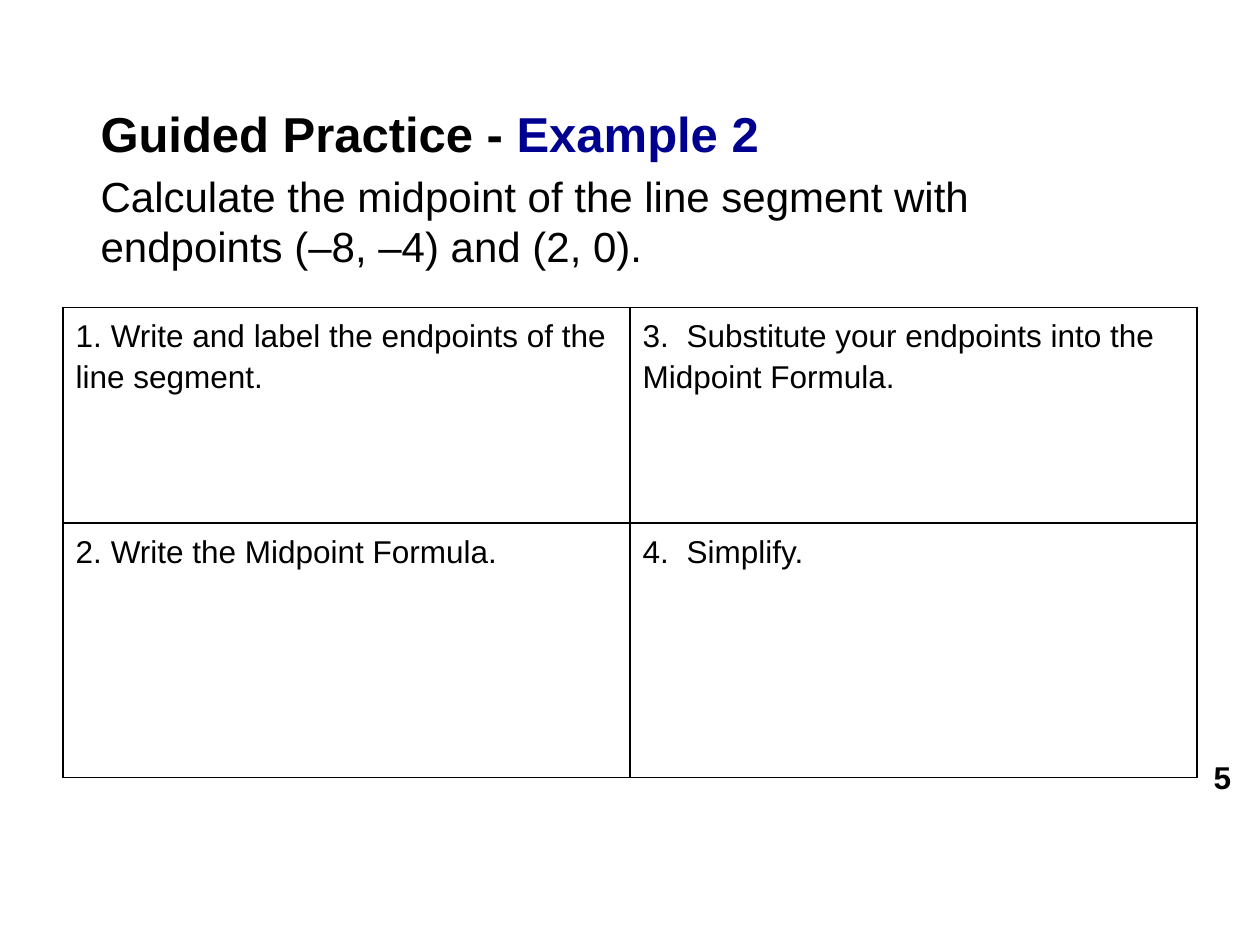
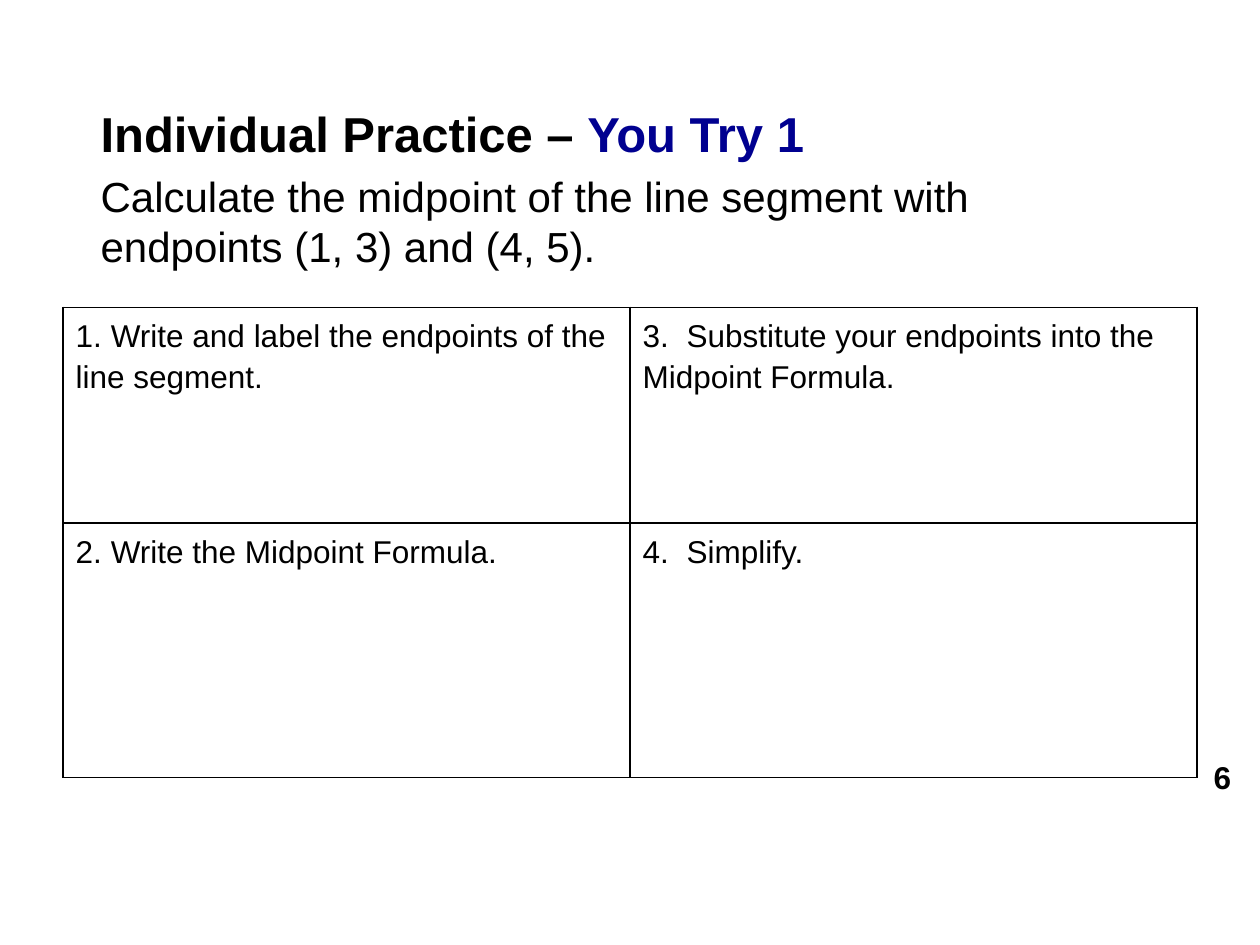
"""Build two midpoint practice slides, each with a four-step worksheet."""
from dataclasses import dataclass

from lxml.etree import SubElement
from pptx import Presentation
from pptx.dml.color import RGBColor
from pptx.enum.text import MSO_ANCHOR, PP_ALIGN
from pptx.oxml.ns import qn
from pptx.util import Inches, Pt

EXERCISES = [
    {
        "lesson": "Guided Practice - ",
        "label": "Example 2",
        "task": "Calculate the midpoint of the line segment with endpoints (–8, –4) and (2, 0).",
        "number": "5",
    },
    {
        "lesson": "Individual Practice – ",
        "label": "You Try 1",
        "task": "Calculate the midpoint of the line segment with endpoints (1, 3) and (4, 5).",
        "number": "6",
    },
]

STEP_COLUMNS = [
    ["Write and label the endpoints of the line segment.", "Write the Midpoint Formula."],
    ["Substitute your endpoints into the Midpoint Formula.", "Simplify."],
]


@dataclass(frozen=True)
class Theme:
    font: str = "Arial"
    ink: str = "000000"
    accent: str = "000090"
    paper: str = "FFFFFF"
    title_size: int = 28
    task_size: int = 24
    body_size: int = 18
    border_width: int = 1
    step_spacing: float = 1.15


THEME = Theme()
PROMPT_BOX = (0.7, 0.7, 8.59, 5.47)
PROMPT_TOP_INSET = 0.12
NUMBER_BOX = (9.07, 6.01, 0.8, 0.31)
TABLE_BOX = (0.5, 2.44, 9, 3.73)
ROW_HEIGHTS = [1.71, 2.02]
STEP_TABS = [0.28, 0.35]


def style_run(run, size, color=THEME.ink, bold=False):
    run.font.name = THEME.font
    run.font.size = Pt(size)
    run.font.bold = bold
    run.font.color.rgb = RGBColor.from_string(color)


def add_text_frame(slide, box):
    text_frame = slide.shapes.add_textbox(*map(Inches, box)).text_frame
    text_frame.word_wrap = True
    return text_frame


def add_prompt(slide, exercise):
    text_frame = add_text_frame(slide, PROMPT_BOX)
    text_frame.margin_top = Inches(PROMPT_TOP_INSET)
    title = text_frame.paragraphs[0]
    for text, color in ((exercise["lesson"], THEME.ink), (exercise["label"], THEME.accent)):
        run = title.add_run()
        run.text = text
        style_run(run, THEME.title_size, color, bold=True)
    task = text_frame.add_paragraph()
    task.text = exercise["task"]
    task.space_before = Pt(0.2 * THEME.task_size)
    style_run(task.runs[0], THEME.task_size)


def add_number(slide, number):
    text_frame = add_text_frame(slide, NUMBER_BOX)
    text_frame.vertical_anchor = MSO_ANCHOR.MIDDLE
    text_frame.text = number
    paragraph = text_frame.paragraphs[0]
    paragraph.alignment = PP_ALIGN.RIGHT
    style_run(paragraph.runs[0], THEME.body_size, bold=True)


def style_cell(cell):
    properties = cell._tc.get_or_add_tcPr()
    for side in ("lnL", "lnR", "lnT", "lnB"):
        line = SubElement(properties, qn(f"a:{side}"), w=str(Pt(THEME.border_width)))
        fill = SubElement(line, qn("a:solidFill"))
        SubElement(fill, qn("a:srgbClr"), val=THEME.ink)
    cell.fill.solid()
    cell.fill.fore_color.rgb = RGBColor.from_string(THEME.paper)


def write_step(cell, text, tab):
    cell.text_frame.text = text
    paragraph = cell.text_frame.paragraphs[0]
    tabs = SubElement(paragraph._p.get_or_add_pPr(), qn("a:tabLst"))
    SubElement(tabs, qn("a:tab"), pos=str(Inches(tab)), algn="l")
    paragraph.line_spacing = THEME.step_spacing
    style_run(paragraph.runs[0], THEME.body_size)


def add_steps(slide):
    row_count, column_count = len(ROW_HEIGHTS), len(STEP_COLUMNS)
    table = slide.shapes.add_table(row_count, column_count, *map(Inches, TABLE_BOX)).table
    for row, height in zip(table.rows, ROW_HEIGHTS):
        row.height = Inches(height)
    for column_index, steps in enumerate(STEP_COLUMNS):
        for row_index, step in enumerate(steps):
            cell = table.cell(row_index, column_index)
            style_cell(cell)
            number = column_index * row_count + row_index + 1
            write_step(cell, f"{number}.\t{step}", STEP_TABS[column_index])


def main():
    presentation = Presentation()
    presentation.slide_width = Inches(10)
    presentation.slide_height = Inches(7.5)
    for exercise in EXERCISES:
        slide = presentation.slides.add_slide(presentation.slide_layouts[6])
        add_prompt(slide, exercise)
        add_number(slide, exercise["number"])
        add_steps(slide)
    presentation.save("out.pptx")


if __name__ == "__main__":
    main()
